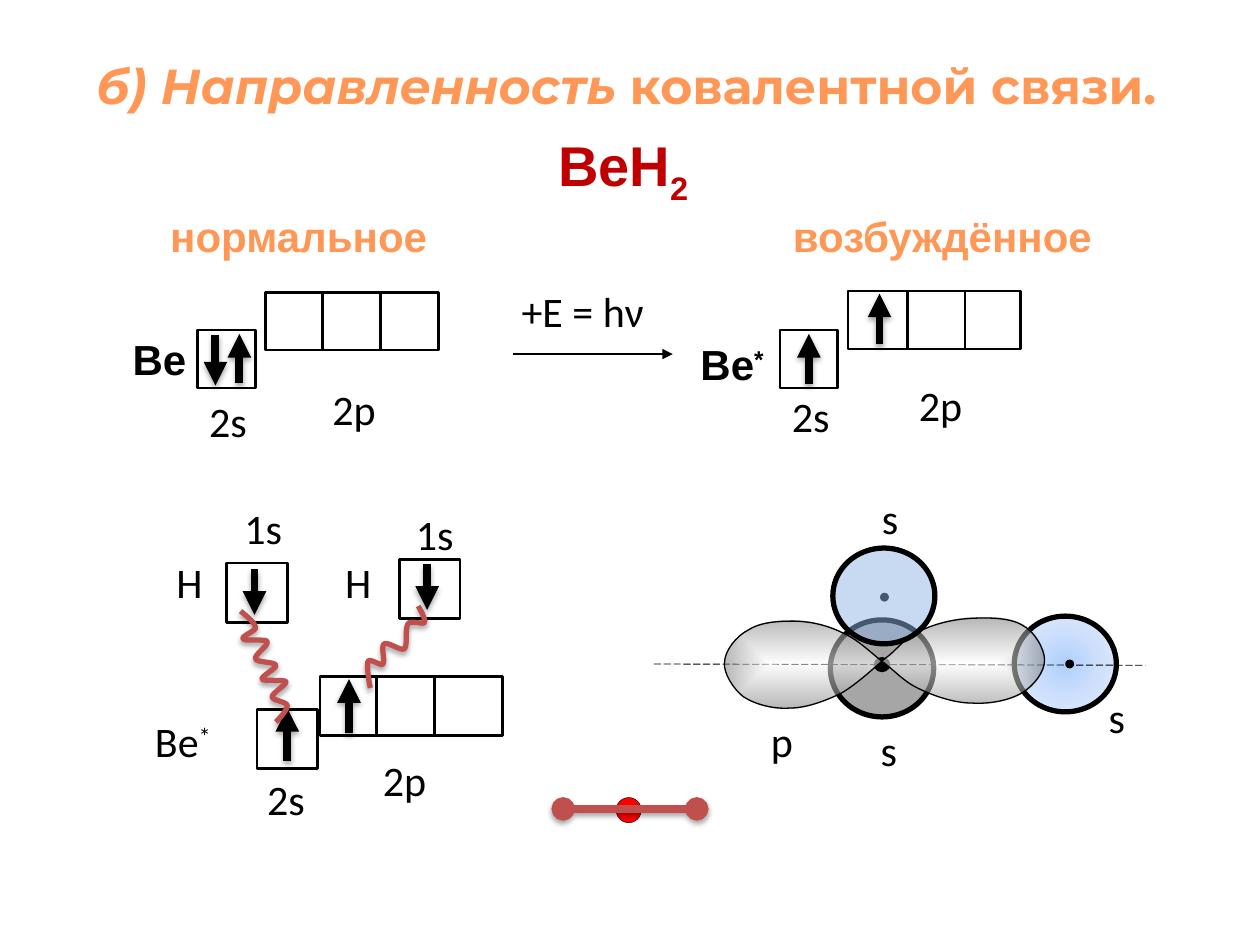
from lxml import etree
from pptx import Presentation
from pptx.dml.color import RGBColor
from pptx.enum.dml import MSO_LINE
from pptx.enum.shapes import MSO_CONNECTOR, MSO_SHAPE
from pptx.enum.text import MSO_ANCHOR, PP_ALIGN
from pptx.oxml import parse_xml
from pptx.oxml.ns import qn
from pptx.util import Inches, Pt

RECT, OVAL, NODE = MSO_SHAPE.RECTANGLE, MSO_SHAPE.OVAL, MSO_SHAPE.FLOWCHART_CONNECTOR
LEFT, MID = PP_ALIGN.LEFT, PP_ALIGN.CENTER
BLACK = RGBColor(0, 0, 0)
ORANGE = RGBColor(0xFF, 0x98, 0x56)
CRIMSON = RGBColor(0xC0, 0, 0)
BRICK = RGBColor(0xC0, 0x50, 0x4D)
RED = RGBColor(0xFF, 0, 0)
GREY = RGBColor(0xA6, 0xA6, 0xA6)
BLUE = RGBColor(0x8E, 0xB4, 0xE3)
NS = 'xmlns:a="http://schemas.openxmlformats.org/drawingml/2006/main"'

TITLE = ("б) Направленность", " ковалентной связи. ")
HEADS = [
    ("ВеН", "2", (4.3, 0.99, 1.29, 0.64), 32, CRIMSON),
    ("возбуждённое", "", (6.18, 1.62, 2.6, 0.5), 24, ORANGE),
    ("нормальное", "", (1.24, 1.62, 2.26, 0.5), 24, ORANGE),
]
TIGHT, WIDE, PLAIN = (0.06, 0.03), (0.12, 0.06), (0.1, 0.05)
LABELS = [
    (TIGHT, MID, "Calibri", [
        ("2s", "", (1.54, 3.11, 0.54, 0.45)), ("2р", "", (2.57, 3.01, 0.48, 0.38)),
        ("+Ε = hν", "", (3.89, 2.24, 1.47, 0.46)),
        ("2s", "", (6.13, 3.07, 0.61, 0.48)), ("2р", "", (7.17, 2.98, 0.59, 0.49))]),
    (TIGHT, MID, "Arial", [
        ("Ве", "", (0.96, 2.62, 0.61, 0.44)), ("Ве", "*", (5.47, 2.66, 0.68, 0.46))]),
    (WIDE, LEFT, "Calibri", [
        ("Н", "", (2.62, 4.36, 0.47, 0.46)), ("1s", "", (3.18, 3.98, 0.72, 0.47)),
        ("Н", "", (1.28, 4.36, 0.47, 0.46)), ("1s", "", (1.82, 3.93, 0.68, 0.52))]),
    (TIGHT, LEFT, "Calibri", [
        ("2s", "", (2.06, 6.11, 0.62, 0.38)), ("2р", "", (2.98, 5.96, 0.63, 0.52)),
        ("Ве", "*", (1.17, 5.65, 0.85, 0.53))]),
    (PLAIN, LEFT, "Calibri", [
        ("s", "", (6.9, 3.86, 0.42, 0.37)), ("s", "", (6.89, 5.7, 0.52, 0.51)),
        ("s", "", (8.7, 5.44, 0.52, 0.51)), ("p", "", (6.02, 5.63, 0.44, 0.53))]),
]
CELLS = [(1.57, 2.62, 0.46, 0.46), (6.19, 2.62, 0.46, 0.46), (3.17, 4.44, 0.48, 0.47),
         (1.8, 4.47, 0.48, 0.47), (2.04, 5.63, 0.48, 0.47)]
ROWS = [((2.11, 2.32, 1.37, 0.46), 2.56), ((6.73, 2.31, 1.37, 0.46), 7.2),
        ((2.54, 5.37, 1.45, 0.47), 2.99)]
STEP = 0.46
SPINS = [(1.71, 2.66, 3.06), (1.9, 3.04, 2.65), (6.98, 2.73, 2.33), (6.42, 3.05, 2.65),
         (3.39, 4.48, 4.84), (2.02, 4.52, 4.88), (2.77, 5.82, 5.39), (2.28, 6.04, 5.62)]
WAVES = [
    [(1.91, 4.85), (1.97, 4.9), (2.02, 4.94), (2.03, 4.98), (2.03, 5.01), (1.91, 5.05),
     (1.93, 5.07), (1.94, 5.09), (2.11, 5.07), (2.12, 5.09), (2.14, 5.12), (2.01, 5.2),
     (2.03, 5.23), (2.04, 5.26), (2.18, 5.25), (2.19, 5.28), (2.2, 5.3), (2.07, 5.37),
     (2.08, 5.39), (2.09, 5.41), (2.25, 5.39), (2.27, 5.41), (2.28, 5.43), (2.16, 5.5),
     (2.16, 5.53), (2.16, 5.56), (2.28, 5.57), (2.28, 5.6), (2.28, 5.64), (2.21, 5.71),
     (2.19, 5.73)],
    [(3.32, 4.81), (3.33, 4.83), (3.38, 4.91), (3.37, 4.94), (3.36, 4.96), (3.26, 4.92),
     (3.24, 4.95), (3.21, 4.99), (3.24, 5.12), (3.21, 5.15), (3.18, 5.17), (3.08, 5.09),
     (3.05, 5.11), (3.02, 5.13), (3.06, 5.24), (3.04, 5.27), (3.02, 5.29), (2.94, 5.22),
     (2.92, 5.25), (2.91, 5.29), (2.93, 5.42), (2.94, 5.46)],
]
LOBES = [
    (7.02, 5.23), (7.12, 5.16), (7.17, 5.07), (7.28, 5.02), (7.39, 4.96), (7.54, 4.92),
    (7.68, 4.91), (7.82, 4.9), (8.01, 4.9), (8.11, 4.96), (8.21, 5.01), (8.29, 5.15),
    (8.29, 5.24), (8.29, 5.33), (8.21, 5.44), (8.11, 5.5), (8.01, 5.56), (7.85, 5.59),
    (7.71, 5.58), (7.57, 5.58), (7.4, 5.52), (7.28, 5.46), (7.16, 5.4), (7.1, 5.32),
    (7, 5.25), (6.9, 5.17), (6.8, 5.07), (6.68, 5.02), (6.56, 4.96), (6.42, 4.93),
    (6.29, 4.93), (6.17, 4.93), (6.03, 4.94), (5.94, 5), (5.84, 5.05), (5.75, 5.17),
    (5.75, 5.26), (5.74, 5.34), (5.82, 5.47), (5.9, 5.53), (5.99, 5.59), (6.14, 5.63),
    (6.27, 5.62), (6.4, 5.62), (6.56, 5.56), (6.68, 5.5), (6.8, 5.43), (6.95, 5.29),
    (7.02, 5.23)]
DOTS = [(6.94, 5.22, 0.12, 0.11), (6.99, 4.71, 0.06, 0.06), (8.46, 5.24, 0.06, 0.06)]

deck = Presentation()
deck.slide_width, deck.slide_height = Inches(10), Inches(7.5)
slide = deck.slides.add_slide(deck.slide_layouts[5])
shapes = slide.shapes


def inch(box):
    return [Inches(v) for v in box]


def shade(item):
    props = item._element.spPr
    for old in props.findall(qn("a:effectLst")):
        props.remove(old)
    props.append(parse_xml(
        f'<a:effectLst {NS}><a:outerShdw blurRad="{Pt(3.1)}" dist="{Pt(1.8)}" dir="5400000" '
        'rotWithShape="0"><a:srgbClr val="000000"><a:alpha val="35000"/></a:srgbClr>'
        '</a:outerShdw></a:effectLst>'))


def style(item, fill, color, width):
    item.shadow.inherit = False
    if fill is None:
        item.fill.background()
    else:
        item.fill.solid()
        item.fill.fore_color.rgb = fill
    item.line.color.rgb = color
    item.line.width = Pt(width)
    return item


def draw(kind, box, fill=None, width=1.5):
    return style(shapes.add_shape(kind, *inch(box)), fill, BLACK, width)


def blend(item, form, stops):
    marks = "".join(
        f'<a:gs pos="{pos * 1000}"><a:srgbClr val="{color}"><a:alpha val="{alpha * 1000}"/>'
        '</a:srgbClr></a:gs>' for pos, color, alpha in stops)
    props = item._element.spPr
    props.replace(props.find(qn("a:solidFill")), parse_xml(
        f'<a:gradFill {NS}><a:gsLst>{marks}</a:gsLst><a:path path="{form}">'
        '<a:fillToRect l="50000" t="50000" r="50000" b="50000"/></a:path></a:gradFill>'))


def link(ends, width, color=BLACK, head=None, tail=None, dash=None, shadow=False):
    item = shapes.add_connector(MSO_CONNECTOR.STRAIGHT, *inch(ends))
    item.line.color.rgb = color
    item.line.width = Pt(width)
    if dash:
        item.line.dash_style = dash
    for tag, form in (("a:headEnd", head), ("a:tailEnd", tail)):
        if form:
            etree.SubElement(item.line._ln, qn(tag)).set("type", form)
    if shadow:
        shade(item)
    else:
        etree.SubElement(item._element.spPr, qn("a:effectLst"))


def curve(points, fill, color, width):
    pen = shapes.build_freeform(*inch(points[0]))
    pen.add_line_segments([inch(p) for p in points[1:]], close=fill is not None)
    item = pen.convert_to_shape()
    steps = list(item._element.spPr.iter(qn("a:lnTo")))
    for i in range(0, len(steps), 3):
        bend = etree.Element(qn("a:cubicBezTo"))
        steps[i].addprevious(bend)
        for step in steps[i:i + 3]:
            bend.append(step[0])
            step.getparent().remove(step)
    return style(item, fill, color, width)


def write(text, mark, box, size, font, color, bold, align, pad=PLAIN, wrap=True, after=0):
    frame = shapes.add_textbox(*inch(box)).text_frame
    frame.word_wrap = wrap
    frame.margin_left = frame.margin_right = Inches(pad[0])
    frame.margin_top = frame.margin_bottom = Inches(pad[1])
    para = frame.paragraphs[0]
    para.alignment, para.space_after = align, Pt(after)
    para.font.name, para.font.size, para.font.bold = font, Pt(size), bold
    para.font.color.rgb = color
    para.add_run().text = text
    if mark:
        run = para.add_run()
        run.text = mark
        run._r.get_or_add_rPr().set("baseline", "30000" if mark == "*" else "-25000")


title = shapes.title
title.left, title.top, title.width, title.height = inch((0.47, 0.39, 9.11, 0.57))
title.text_frame.word_wrap = False
title.text_frame.vertical_anchor = MSO_ANCHOR.MIDDLE
para = title.text_frame.paragraphs[0]
para.alignment = MID
para.font.name, para.font.size, para.font.bold = "Montserrat", Pt(28), True
para.font.color.rgb = ORANGE
for text, slant in zip(TITLE, (True, False)):
    run = para.add_run()
    run.text, run.font.italic = text, slant

for text, mark, box, size, color in HEADS:
    write(text, mark, box, size, "Arial", color, True, MID, wrap=False)

for box in CELLS:
    draw(RECT, box)
for box, first in ROWS:
    draw(RECT, box)
    for x in (first, first + STEP):
        link((x, box[1], x, box[1] + box[3]), 1.5)
for x, start, end in SPINS:
    link((x, start, x, end), 4.5, tail="triangle", shadow=True)
link((4.07, 2.81, 5.34, 2.81), 0.75, tail="triangle")
for wave in WAVES:
    shade(curve(wave, None, BRICK, 3))

draw(NODE, (4.89, 6.33, 0.2, 0.2), RED, 0.25)
link((4.47, 6.42, 5.53, 6.42), 4.5, BRICK, "oval", "oval", shadow=True)

draw(OVAL, (6.59, 4.92, 0.82, 0.77), GREY, 3)
blend(draw(OVAL, (8.05, 4.89, 0.81, 0.76), BLUE, 3), "circle",
      [(0, "B0CFFB", 100), (50, "CEE0FC", 100), (100, "E6EFFD", 100)])
link((5.19, 5.27, 9.09, 5.28), 0.5, dash=MSO_LINE.LONG_DASH)
for box in DOTS:
    draw(OVAL, box, BLACK, 0.75)
blend(curve(LOBES, GREY, BLACK, 0.75), "rect", [(0, "FFFFFF", 54), (100, "7A7A7A", 55)])
cloud = draw(OVAL, (6.61, 4.35, 0.81, 0.76), BLUE, 3)
tint = cloud._element.spPr.find(qn("a:solidFill"))[0]
etree.SubElement(tint, qn("a:alpha")).set("val", "49000")

for pad, align, font, items in LABELS:
    for text, mark, box in items:
        write(text, mark, box, 24, font, BLACK, font == "Arial", align, pad, after=10)

deck.save("out.pptx")
